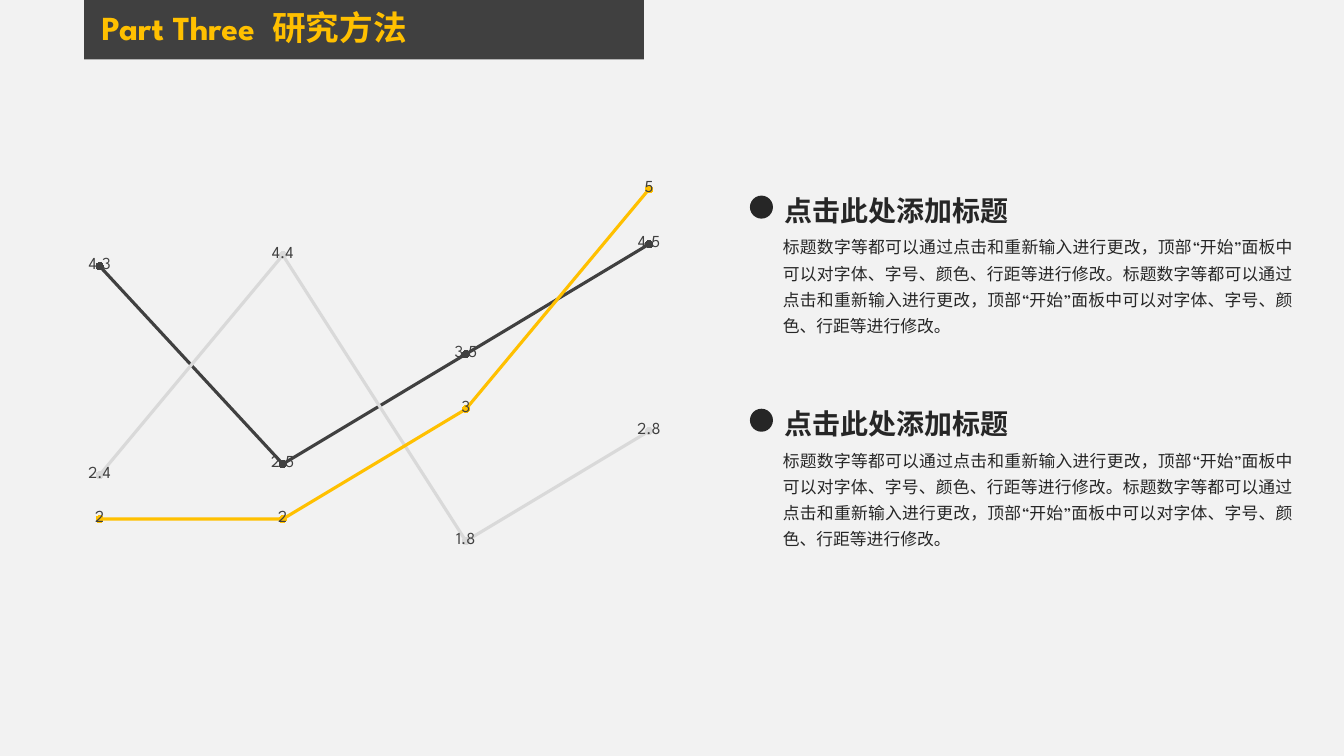
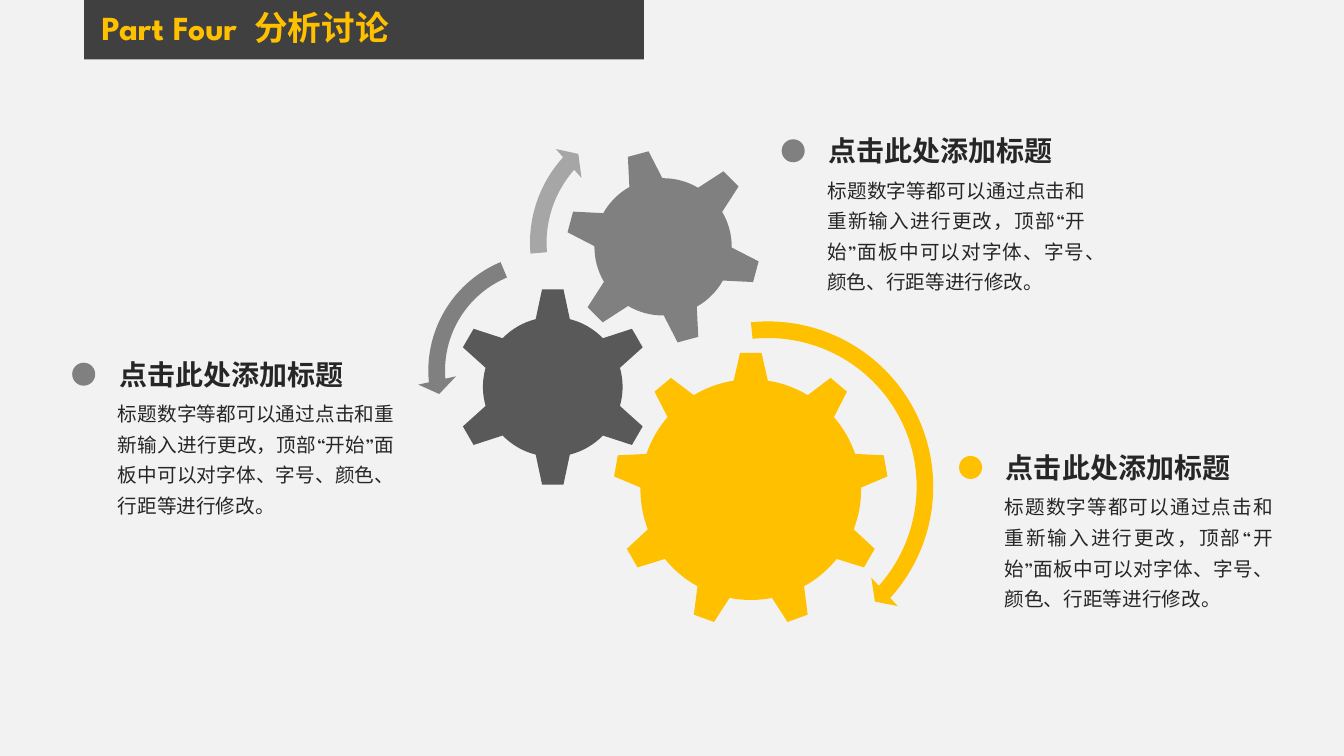
from math import asin, cos, radians, sin

from lxml import etree
from pptx import Presentation
from pptx.chart.data import CategoryChartData
from pptx.dml.color import RGBColor
from pptx.enum.chart import XL_CHART_TYPE, XL_LABEL_POSITION, XL_MARKER_STYLE
from pptx.enum.shapes import MSO_SHAPE
from pptx.enum.text import MSO_ANCHOR, PP_ALIGN
from pptx.oxml.ns import qn
from pptx.util import Cm, Pt

LINE = XL_CHART_TYPE.LINE_MARKERS
MIDDLE = XL_LABEL_POSITION.CENTER
ROUND = XL_MARKER_STYLE.CIRCLE
RECT, OVAL = MSO_SHAPE.RECTANGLE, MSO_SHAPE.OVAL
RIGHT, LEFT = MSO_SHAPE.CIRCULAR_ARROW, MSO_SHAPE.LEFT_CIRCULAR_ARROW
TOP = MSO_ANCHOR.TOP
START, CENTER, JUSTIFY = PP_ALIGN.LEFT, PP_ALIGN.CENTER, PP_ALIGN.JUSTIFY

FONT = "League Spartan"
PAPER, DARK, INK, GOLD = "F2F2F2", "404040", "262626", "FFC000"
SLATE, GRAY, SILVER, PALE = "595959", "808080", "A6A6A6", "D9D9D9"
HEAD = "点击此处添加标题"
BODY = ("标题数字等都可以通过点击和重新输入进行更改，顶部“开始”面板中可以"
        "对字体、字号、颜色、行距等进行修改。")


def color(code):
    return RGBColor.from_string(code)


def write(frame, *parts, size=12, tint=INK, bold=False, align=START,
          line=1.0, wrap=True, gap=0):
    frame.word_wrap = wrap
    frame.vertical_anchor = TOP
    para = frame.paragraphs[0]
    para.alignment = align
    para.line_spacing = line
    for part in parts:
        run = para.add_run()
        run.text = part
        font = run.font
        font.name, font.size, font.bold = FONT, Pt(size), bold
        font.color.rgb = color(tint)
        props = run._r.get_or_add_rPr()
        etree.SubElement(props, qn("a:ea"), typeface=FONT)
        if gap and part == " ":
            props.set("spc", str(gap * 100))


class Deck:
    """Holds the shared style and the slide being drawn."""

    def __init__(self):
        self.show = Presentation()
        self.show.slide_width, self.show.slide_height = Cm(33.87), Cm(19.05)
        back = self.show.slide_master.background.fill
        back.solid()
        back.fore_color.rgb = color(PAPER)

    def page(self, part, name):
        slide = self.show.slides.add_slide(self.show.slide_layouts[5])
        self.shapes = slide.shapes
        band = self.shape(RECT, 2.12, 0, 14.11, 1.5, DARK)
        title = self.shapes.title
        title._element.addprevious(band._element)
        title.left, title.top = Cm(2.31), Cm(0.15)
        title.width, title.height = Cm(9.53), Cm(1.27)
        write(title.text_frame, part, " ", name, size=24, tint=GOLD,
              bold=True, line=0.9, gap=6)

    def paint(self, shape, tint):
        shape.shadow.inherit = False
        shape.fill.solid()
        shape.fill.fore_color.rgb = color(tint)
        shape.line.fill.background()
        return shape

    def shape(self, kind, x, y, w, h, tint):
        return self.paint(
            self.shapes.add_shape(kind, Cm(x), Cm(y), Cm(w), Cm(h)), tint)

    def text(self, x, y, w, h, words, **style):
        box = self.shapes.add_textbox(Cm(x), Cm(y), Cm(w), Cm(h))
        write(box.text_frame, words, **style)

    def item(self, x, y, w, h, words, size, dot, shift):
        self.text(x, y, 6.22, 1.12, HEAD, size=20, bold=True, align=CENTER,
                  wrap=False)
        self.text(x, y + 0.95, w, h, words, size=size, align=JUSTIFY, line=1.3)
        across, down = shift
        self.shape(OVAL, x - across, y + down, 0.58, 0.58, dot)

    def gear(self, x, y, root, tip, teeth, turn, tint):
        foot, top, steps = 0.43, 0.27, 8
        pitch = radians(360 / teeth)
        edge = asin(foot / root)
        points = []

        def add(angle, side, out):
            points.append((Cm(x + out * sin(angle) + side * cos(angle)),
                           Cm(y - out * cos(angle) + side * sin(angle))))

        for tooth in range(teeth):
            angle = radians(turn) + tooth * pitch
            add(angle, -top, tip)
            add(angle, top, tip)
            for step in range(steps + 1):
                add(angle + edge + (pitch - 2 * edge) * step / steps, 0, root)
        pen = self.shapes.build_freeform(*points[0])
        pen.add_line_segments(points[1:], close=True)
        self.paint(pen.convert_to_shape(), tint)

    def arrow(self, kind, x, y, size, thick, angles, head, tint):
        arc = self.shape(kind, x, y, size, size, tint)
        sweep = [angle * 0.6 for angle in angles]
        for spot, value in enumerate([thick / 100, *sweep, head / 100]):
            arc.adjustments[spot] = value

    def chart(self, x, y, w, h, names, rows):
        data = CategoryChartData()
        data.categories = names
        for spot, (values, _) in enumerate(rows, 1):
            data.add_series(f"Series {spot}", values)
        chart = self.shapes.add_chart(
            LINE, Cm(x), Cm(y), Cm(w), Cm(h), data).chart
        chart.has_legend = chart.has_title = False
        chart.font.name, chart.font.size = FONT, Pt(10)
        axis = chart.value_axis
        axis.minimum_scale, axis.maximum_scale = 0, 6
        axis.has_major_gridlines = False
        axis.visible = chart.category_axis.visible = False
        chart.plots[0].vary_by_categories = False
        for line, (_, tint) in zip(chart.plots[0].series, rows):
            line.smooth = False
            line.format.line.width = Pt(2.25)
            line.format.line.color.rgb = color(tint)
            mark = line.marker
            mark.style, mark.size = ROUND, 5
            mark.format.fill.solid()
            mark.format.fill.fore_color.rgb = color(tint)
            mark.format.line.fill.background()
            labels = line.data_labels
            labels.show_value, labels.position = True, MIDDLE
            labels.font.name, labels.font.size = FONT, Pt(12)
            labels.font.color.rgb = color(DARK)


def main():
    deck = Deck()

    deck.page("Part Three", "研究方法")
    deck.chart(-0.18, 1.65, 19.23, 17.32, ["1", "2", "3", "4"], [
        ((4.3, 2.5, 3.5, 4.5), DARK),
        ((2.4, 4.4, 1.8, 2.8), PALE),
        ((2, 2, 3, 5), GOLD),
    ])
    for y in (4.75, 10.12):
        deck.item(19.48, y, 13.36, 3.58, BODY * 2, 12, INK, (0.58, 0.18))

    deck.page("Part Four", "分析讨论")
    deck.gear(18.92, 12.34, 2.78, 3.45, 9, 0, GOLD)
    deck.gear(13.93, 9.75, 1.76, 2.46, 6, 0, SLATE)
    deck.gear(16.71, 6.22, 1.73, 2.42, 6, -15, GRAY)
    for arrow in (
        (RIGHT, 14.91, 7.82, 8.89, 4.7, (4.98, 42.07, 264.07), 5.5, GOLD),
        (LEFT, 10.52, 6.1, 6.48, 6.5, (7.17, 174.82, 247.3), 7.5, GRAY),
        (RIGHT, 13.08, 2.64, 6.96, 6, (6.57, 221.9, 175.14), 7, SILVER),
    ):
        deck.arrow(*arrow)
    for x, y, w, dot in ((20.6, 3.25, 7.01, GRAY), (2.72, 8.88, 7.47, GRAY),
                         (25.07, 11.23, 7.26, GOLD)):
        deck.item(x, y, w, 3.38, BODY, 14, dot, (0.9, 0.26))

    deck.show.save("out.pptx")


if __name__ == "__main__":
    main()
